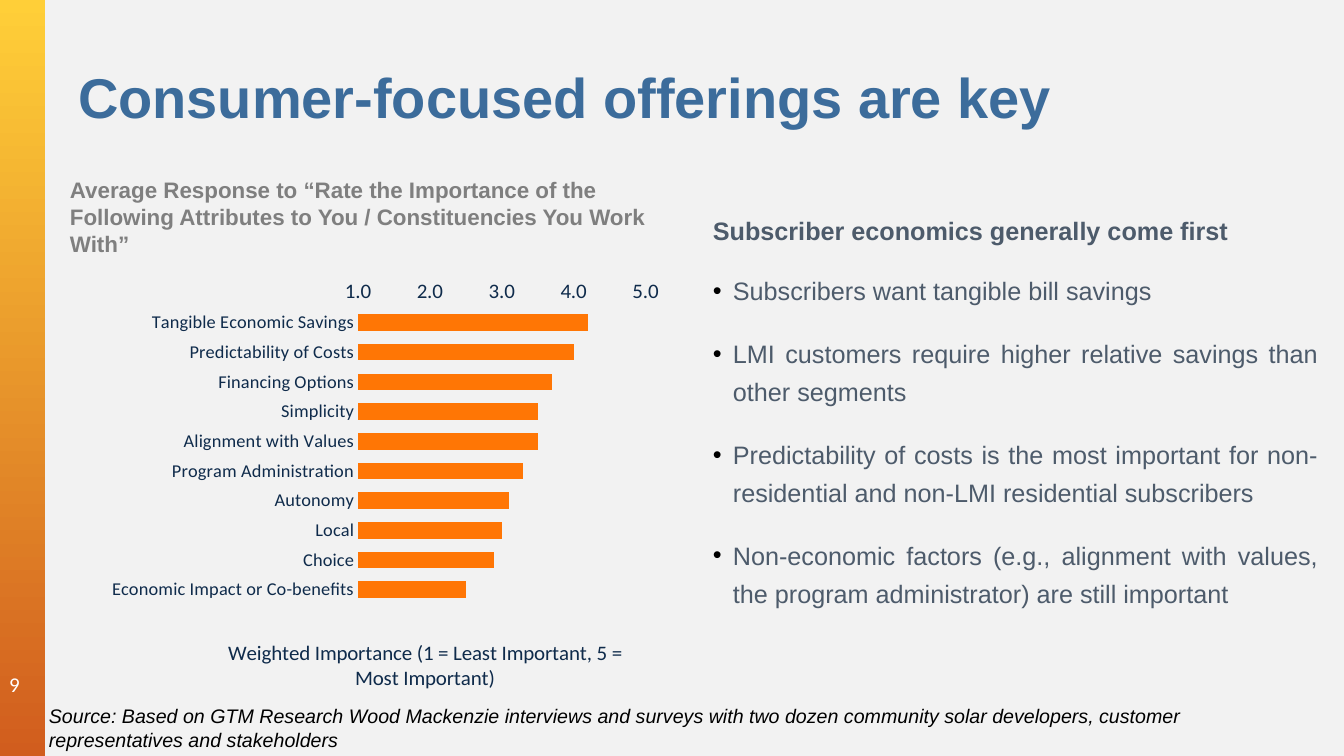
from dataclasses import dataclass

from lxml import etree
from pptx import Presentation
from pptx import util as u
from pptx.chart.data import CategoryChartData
from pptx.dml.color import RGBColor
from pptx.enum import chart as ch, shapes, text
from pptx.oxml import parse_xml
from pptx.oxml.ns import nsdecls, qn

EMU_PER_PX = 914400 / 100.8


def px(length: int) -> u.Emu:
    return u.Emu(round(length * EMU_PER_PX))


@dataclass(frozen=True)
class Theme:
    background: str = "F2F2F2"
    stripe_top: str = "FFCF38"
    stripe_bottom: str = "D15D1E"
    title: str = "3C6C9B"
    caption: str = "7F7F7F"
    body: str = "4D5B6B"
    chart_text: str = "0F2B4B"
    bar: str = "FF7605"
    black: str = "000000"
    white: str = "FFFFFF"
    font: str = "Arial"
    chart_font: str = "Calibri"
    title_size: int = 40
    body_size: int = 18
    caption_size: int = 16
    source_size: int = 14
    category_size: int = 14
    number_size: int = 15


THEME = Theme()


@dataclass(frozen=True)
class Area:
    left: int
    top: int
    width: int
    height: int

    def emu(self) -> tuple:
        return px(self.left), px(self.top), px(self.width), px(self.height)


@dataclass(frozen=True)
class Point:
    wording: str
    before: int
    after: int = 0
    heading: bool = False


POINTS = [
    Point("Subscriber economics generally come first", 0, 10, heading=True),
    Point("Subscribers want tangible bill savings", 6),
    Point("LMI customers require higher relative savings than other segments", 18),
    Point("Predictability of costs is the most important for non-residential "
          "and non-LMI residential subscribers", 18),
    Point("Non-economic factors (e.g., alignment with values, the program "
          "administrator) are still important", 18),
]

RATINGS = {
    "Tangible Economic Savings": 4.2,
    "Predictability of Costs": 4.0,
    "Financing Options": 3.7,
    "Simplicity": 3.5,
    "Alignment with Values": 3.5,
    "Program Administration": 3.3,
    "Autonomy": 3.1,
    "Local": 3.0,
    "Choice": 2.9,
    "Economic Impact or Co-benefits": 2.5,
}


def format_font(font, *, size: int, color: str, name: str = THEME.font,
                bold: bool = False, italic: bool = False) -> None:
    font.size, font.name = u.Pt(size), name
    font.bold, font.italic = bold, italic
    font.color.rgb = RGBColor.from_string(color)


def write(para, wording: str, *, align=text.PP_ALIGN.LEFT, **style) -> None:
    para.alignment = align
    span = para.add_run()
    span.text = wording
    format_font(span.font, **style)


def add_box(page, area: Area, anchor=text.MSO_ANCHOR.TOP):
    frame = page.shapes.add_textbox(*area.emu()).text_frame
    frame.word_wrap = True
    frame.vertical_anchor = anchor
    return frame


def add_bullet(para, indent: int) -> None:
    props = para._p.get_or_add_pPr()
    props.set("marL", str(px(indent)))
    props.set("indent", str(-px(indent)))
    color = etree.SubElement(props, qn("a:buClr"))
    etree.SubElement(color, qn("a:srgbClr")).set("val", THEME.black)
    etree.SubElement(props, qn("a:buFont")).set("typeface", THEME.font)
    etree.SubElement(props, qn("a:buChar")).set("char", "•")


def layout_xml(inner: bool = False, **places: float):
    """Manual chart layout; places are fractions of the chart's size."""
    target = '<c:layoutTarget val="inner"/>' if inner else ""
    modes = '<c:xMode val="edge"/><c:yMode val="edge"/>'
    values = "".join(f'<c:{key} val="{value}"/>' for key, value in places.items())
    return parse_xml(f'<c:layout {nsdecls("c")}><c:manualLayout>{target}{modes}'
                     f'{values}</c:manualLayout></c:layout>')


def place(element, layout, index: int) -> None:
    for old in element.findall(qn("c:layout")):
        element.remove(old)
    element.insert(index, layout)


def add_stripe(page) -> None:
    stripe = page.shapes.add_shape(shapes.MSO_SHAPE.RECTANGLE,
                                   *Area(0, 0, 45, 756).emu())
    stripe.shadow.inherit = False
    stripe.line.fill.background()
    stripe.fill.gradient()
    stripe.fill.gradient_angle = 270
    colors = THEME.stripe_top, THEME.stripe_bottom
    for position, (stop, color) in enumerate(zip(stripe.fill.gradient_stops, colors)):
        stop.position = position
        stop.color.rgb = RGBColor.from_string(color)


def add_ratings_chart(page) -> None:
    data = CategoryChartData(number_format="0.0")
    data.categories = list(RATINGS)
    data.add_series("Series 1", list(RATINGS.values()))
    chart = page.shapes.add_chart(ch.XL_CHART_TYPE.BAR_CLUSTERED,
                                  *Area(112, 279, 549, 419).emu(), data).chart
    chart.has_legend = chart.has_title = False
    style = dict(color=THEME.chart_text, name=THEME.chart_font)
    format_font(chart.font, size=THEME.caption_size, **style)

    # Bars
    plot = chart.plots[0]
    plot.gap_width = 80
    plot.vary_by_categories = False
    bars = plot.series[0].format.fill
    bars.solid()
    bars.fore_color.rgb = RGBColor.from_string(THEME.bar)

    # Axes
    categories, values = chart.category_axis, chart.value_axis
    categories.reverse_order = True
    categories.crosses = ch.XL_AXIS_CROSSES.MAXIMUM
    for axis, size in ((categories, THEME.category_size), (values, THEME.caption_size)):
        axis.has_major_gridlines = False
        axis.major_tick_mark = ch.XL_TICK_MARK.NONE
        axis.format.line.fill.background()
        format_font(axis.tick_labels.font, size=size, **style)
    values.minimum_scale, values.maximum_scale, values.major_unit = 1, 5, 1
    values.tick_labels.number_format = "0.0"
    values.tick_labels.number_format_is_linked = False

    # Axis title and plot position
    title = values.axis_title
    write(title.text_frame.paragraphs[0],
          "Weighted Importance (1 = Least Important, 5 = Most Important)",
          align=text.PP_ALIGN.CENTER, size=THEME.caption_size, **style)
    place(title._element, layout_xml(x=0.15, y=0.86), 1)
    place(chart._chartSpace.chart.plotArea,
          layout_xml(inner=True, x=0.41, y=0.01, w=0.56, h=0.77), 0)


def main() -> None:
    deck = Presentation()
    deck.slide_width, deck.slide_height = px(1344), px(756)
    page = deck.slides.add_slide(deck.slide_layouts[5])
    page.background.fill.solid()
    page.background.fill.fore_color.rgb = RGBColor.from_string(THEME.background)

    # Side stripe and page number
    add_stripe(page)
    number = add_box(page, Area(-4, 658, 56, 53), text.MSO_ANCHOR.MIDDLE)
    number.margin_left = number.margin_right = px(13)
    write(number.paragraphs[0], "9", size=THEME.number_size, color=THEME.white,
          name=THEME.chart_font)

    # Title
    title = page.shapes.title
    title.left, title.top, title.width, title.height = Area(68, 57, 1098, 120).emu()
    title.text_frame.vertical_anchor = text.MSO_ANCHOR.TOP
    title.text_frame.auto_size = text.MSO_AUTO_SIZE.NONE
    write(title.text_frame.paragraphs[0], "Consumer-focused offerings are key",
          size=THEME.title_size, color=THEME.title, bold=True)

    # Chart with caption and source
    add_ratings_chart(page)
    write(add_box(page, Area(60, 171, 623, 65)).paragraphs[0],
          "Average Response to “Rate the Importance of the Following Attributes "
          "to You / Constituencies You Work With”",
          size=THEME.caption_size, color=THEME.caption, bold=True)
    write(add_box(page, Area(39, 699, 1288, 34)).paragraphs[0],
          "Source: Based on GTM Research Wood Mackenzie interviews and surveys with "
          "two dozen community solar developers, customer representatives and "
          "stakeholders",
          size=THEME.source_size, color=THEME.black, italic=True)

    # Findings
    findings = add_box(page, Area(703, 158, 625, 500), text.MSO_ANCHOR.MIDDLE)
    for index, point in enumerate(POINTS):
        para = findings.add_paragraph() if index else findings.paragraphs[0]
        if not point.heading:
            add_bullet(para, 20)
        para.line_spacing = 1.25
        para.space_before, para.space_after = u.Pt(point.before), u.Pt(point.after)
        write(para, point.wording, align=text.PP_ALIGN.JUSTIFY,
              size=THEME.body_size, color=THEME.body, bold=point.heading)

    deck.save("out.pptx")


if __name__ == "__main__":
    main()
